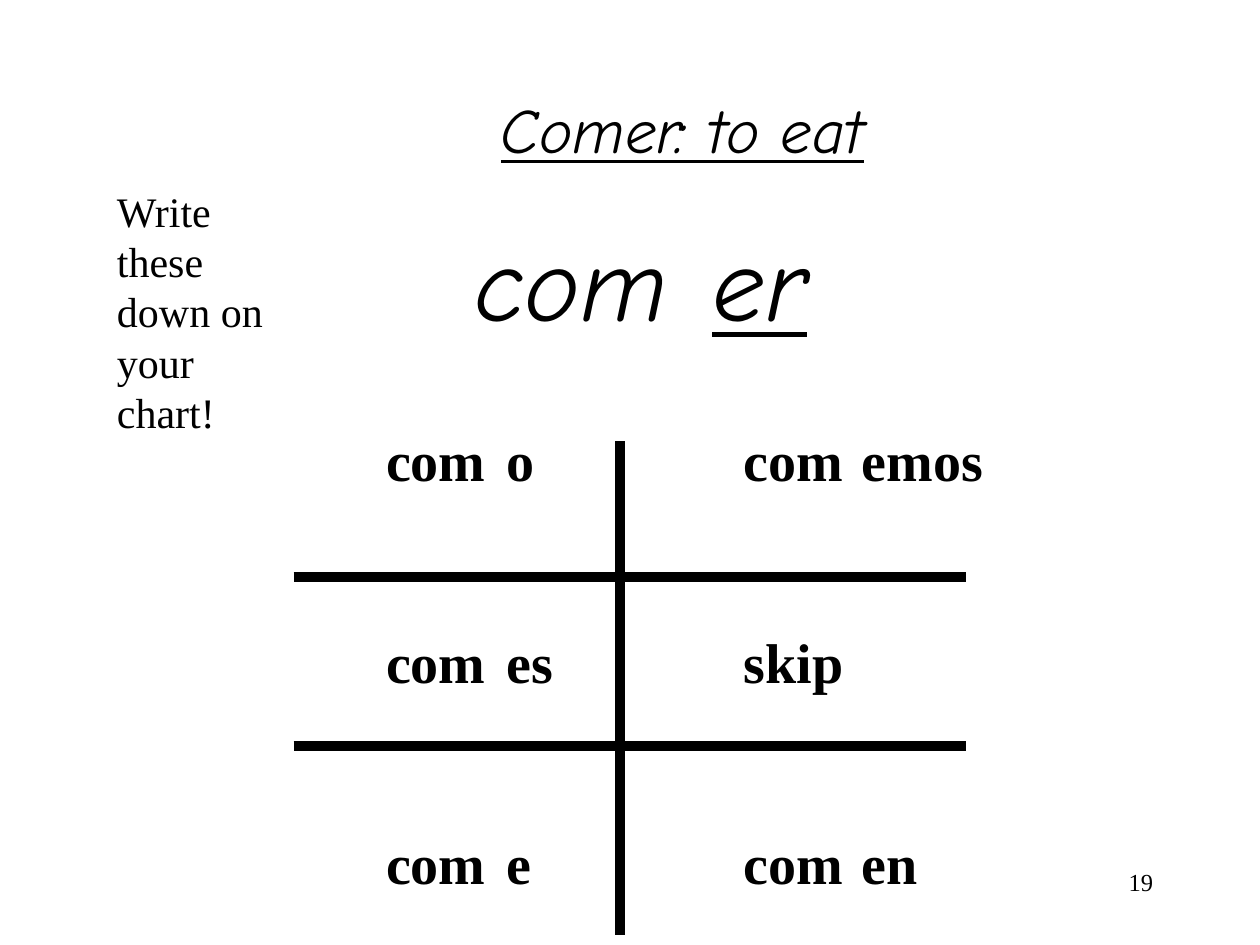
import pptx
import pptx.util
import pptx.dml.color
import pptx.enum.shapes
import pptx.enum.text
from lxml import etree

Inches, Pt = pptx.util.Inches, pptx.util.Pt
ALIGN = pptx.enum.text.PP_ALIGN
COLORS = {"ink": "000000"}
SCRIPT, SERIF = "Comic Neue", "Times New Roman"

# Content: text, box (left, top, width, height), wrap, alignment, font, size, style
LABELS = [
    ("19", (7.17, 6.83, 2.08, 0.5), True, ALIGN.RIGHT, SERIF, 14, {}),
    ("Comer: to eat", (3.37, 0.67, 3.59, 0.71), False, ALIGN.RIGHT, SCRIPT, 36,
     {"italic": True, "underline": True}),
    ("com", (3.52, 1.67, 2.02, 1.11), False, ALIGN.CENTER, SCRIPT, 60,
     {"italic": True}),
    ("er", (5.5, 1.67, 1.06, 1.1), True, ALIGN.CENTER, SCRIPT, 60,
     {"italic": True, "underline": True}),
    ("Write these down on your chart!", (0.83, 1.42, 1.58, 2.1), True,
     ALIGN.LEFT, SERIF, 24, {}),
]

# Conjugation chart columns: left, width, alignment, {row: text}
COLUMNS = [
    (2.96, 1, ALIGN.CENTER, {0: "com", 1: "com", 2: "com"}),
    (5.8, 1, ALIGN.CENTER, {0: "com", 1: "skip", 2: "com"}),
    (3.92, 0.57, ALIGN.LEFT, {0: "o", 1: "es", 2: "e"}),
    (6.74, 1.17, ALIGN.LEFT, {0: "emos", 2: "en"}),
]
CHART_TOP, CHART_HEIGHT = 3.33, 3.87
ROW_PITCH, LINE_HEIGHT = 115, 38.3  # points

# Chart rules: x1, y1, x2, y2
RULES = [(4.92, 3.5, 4.92, 7.42)] + [(2.33, y, 7.67, y) for y in (4.58, 5.92)]


def ink():
    return pptx.dml.color.RGBColor.from_string(COLORS["ink"])


def add_text(page, lines, place, wrap, align, font, size, style):
    """Add a text box; lines holds (text, space before in points) pairs."""
    box = page.shapes.add_textbox(*map(Inches, place))
    frame = box.text_frame
    frame.word_wrap = wrap
    frame.text = "\n".join(text for text, _ in lines)
    for para, (_, gap) in zip(frame.paragraphs, lines):
        para.alignment = align
        para.space_before = Pt(gap)
        for span in para.runs:
            span.font.name, span.font.size = font, Pt(size)
            span.font.color.rgb = ink()
            for name, value in style.items():
                setattr(span.font, name, value)


def add_rule(page, ends):
    rule = page.shapes.add_connector(
        pptx.enum.shapes.MSO_CONNECTOR.STRAIGHT, *map(Inches, ends))
    rule.line.color.rgb = ink()
    rule.line.width = Pt(6)
    etree.SubElement(rule._element.spPr, pptx.oxml.ns.qn("a:effectLst"))


def main():
    deck = pptx.Presentation()
    deck.slide_width, deck.slide_height = Inches(10), Inches(7.5)
    page = deck.slides.add_slide(deck.slide_layouts[6])

    # Title, infinitive, instruction and page number
    for text, *layout in LABELS:
        add_text(page, [(text, 0)], *layout)

    # Chart columns, spaced so that every entry sits on its row
    for left, width, align, entries in COLUMNS:
        lines, previous = [], None
        for row, text in entries.items():
            gap = 0 if previous is None else (row - previous) * ROW_PITCH - LINE_HEIGHT
            lines.append((text, gap))
            previous = row
        add_text(page, lines, (left, CHART_TOP, width, CHART_HEIGHT), False,
                 align, SERIF, 32, {"bold": True})

    # Chart rules
    for ends in RULES:
        add_rule(page, ends)

    deck.save("out.pptx")


if __name__ == "__main__":
    main()
